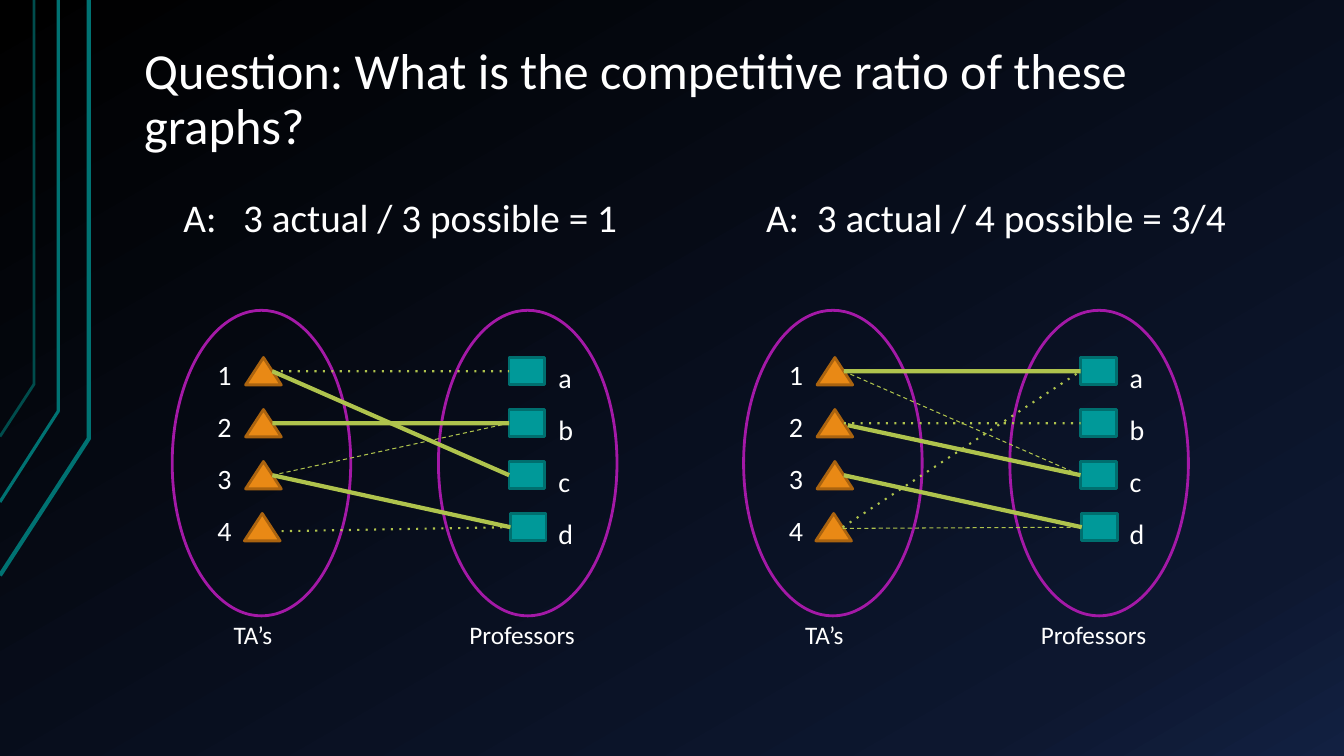
"""Build the slide on the competitive ratio of two TA-professor matchings."""
from copy import deepcopy
from dataclasses import dataclass

from lxml.etree import SubElement
from pptx import Presentation
from pptx.dml.color import RGBColor as Rgb
from pptx.enum.shapes import MSO_CONNECTOR as Link, MSO_SHAPE as Preset
from pptx.enum.text import MSO_ANCHOR as Anchor, MSO_AUTO_SIZE as AutoSize, PP_ALIGN as Align
from pptx.oxml.ns import qn
from pptx.util import Cm, Pt


@dataclass(frozen=True)
class Theme:
    font: str = "Calibri"
    title_size: int = 36
    answer_size: int = 28
    label_size: int = 20
    caption_size: int = 18
    text: str = "FFFFFF"
    backdrop: tuple = ((0, "000000"), (0.85, "0D172F"), (1, "122041"))
    stripe: str = "007272"
    stripe_dim: str = "004C4C"
    ta: tuple = ("E98915", "AA630F")
    professor: tuple = ("009999", "006F6F")
    group: str = "A419A7"
    edge: str = "AFC34D"


theme = Theme()


def write(shape, text, size):
    frame = shape.text_frame
    frame.text = text
    frame.word_wrap = True
    frame.auto_size = AutoSize.NONE
    paragraph = frame.paragraphs[0]
    paragraph.alignment = Align.LEFT
    font = paragraph.runs[0].font
    font.name, font.size = theme.font, Pt(size)
    font.color.rgb = Rgb.from_string(theme.text)
    return paragraph


def paint(shape, line, width, fill=None):
    shape.shadow.inherit = False
    shape.line.color.rgb = Rgb.from_string(line)
    shape.line.width = Pt(width)
    if fill:
        shape.fill.solid()
        shape.fill.fore_color.rgb = Rgb.from_string(fill)
    else:
        shape.fill.background()


deck = Presentation()
deck.slide_width, deck.slide_height = Cm(33.87), Cm(19.05)
slide = deck.slides.add_slide(deck.slide_layouts[3])
shapes = slide.shapes

backdrop = slide.background.fill
backdrop.gradient()
backdrop.gradient_angle = 300
stop_list = slide.element.find(".//" + qn("a:gsLst"))
stop_list.append(deepcopy(stop_list[-1]))
for stop, (position, color) in zip(backdrop.gradient_stops, theme.backdrop):
    stop.position = position
    stop.color.rgb = Rgb.from_string(color)

for x, bend, foot, color, width in [
    (2.24, 11.05, 14.5, theme.stripe, 3),
    (1.47, 10.36, 12.65, theme.stripe, 2.25),
    (0.86, 9.68, 11, theme.stripe_dim, 2),
]:
    outline = shapes.build_freeform(Cm(0), Cm(foot))
    outline.add_line_segments([(Cm(x), Cm(bend)), (Cm(x), Cm(0))], close=False)
    paint(outline.convert_to_shape(), color, width)

question = shapes.title
question.left, question.top, question.width, question.height = Cm(3.38), Cm(0.76), Cm(28.78), Cm(3.4)
write(question, "Question: What is the competitive ratio of these graphs?", theme.title_size).line_spacing = 0.9
question.text_frame.vertical_anchor = Anchor.BOTTOM

for index, left, answer in [
    (1, 3.38, "A:   3 actual / 3 possible = 1"),
    (2, 18.06, "A:  3 actual / 4 possible = 3/4"),
]:
    body = slide.placeholders[index]
    body.left, body.top, body.width, body.height = Cm(left), Cm(4.75), Cm(14.1), Cm(12.4)
    paragraph = write(body, answer, theme.answer_size)
    paragraph.line_spacing, paragraph.space_before = 0.9, Pt(0)
    properties = paragraph._p.get_or_add_pPr()
    properties.set("marL", str(Cm(0.84)))
    properties.set("indent", str(Cm(0.15)))
    SubElement(properties, qn("a:buNone"))
    body.text_frame.margin_top = body.text_frame.margin_bottom = Cm(0.25)

question.text_frame.margin_top = question.text_frame.margin_bottom = Cm(0.25)

strokes = {"matched": (3, "solid"), "spare": (1.5, "dot"), "possible": (0.75, "dash")}
graphs = [
    (0, [
        ("1", "c", "matched", 0, 0),
        ("2", "b", "matched", 0, 0),
        ("3", "b", "possible", 0, 0),
        ("3", "d", "matched", 0, 0),
        ("4", "d", "spare", 0.26, 0.1),
        ("1", "a", "spare", 0, 0),
    ]),
    (14.4, [
        ("1", "c", "possible", 0, 0),
        ("2", "b", "spare", 0, 0),
        ("3", "d", "matched", 0, 0),
        ("4", "a", "spare", 0, 0),
        ("1", "a", "matched", 0, 0),
        ("2", "c", "matched", 0.1, 0.05),
        ("4", "d", "possible", 0, 0.03),
    ]),
]
node_width, node_height, pitch = 0.9, 0.69, 1.31

for shift, edges in graphs:
    starts, professors = {}, {}
    for row, (number, letter) in enumerate(zip("1234", "abcd")):
        drop = row * pitch
        nudge = 0.03 if row == 3 else 0
        ta_left, top = shift + 6.19 - nudge, 9.01 + drop
        ta = shapes.add_shape(Preset.ISOSCELES_TRIANGLE, Cm(ta_left), Cm(top), Cm(node_width), Cm(node_height))
        paint(ta, theme.ta[1], 2, theme.ta[0])
        starts[number] = (ta_left + node_width * 0.75, top + node_height / 2)
        professor = shapes.add_shape(
            Preset.RECTANGLE, Cm(shift + 12.83 + nudge), Cm(top), Cm(node_width), Cm(node_height))
        paint(professor, theme.professor[1], 2, theme.professor[0])
        professors[letter] = professor
        for label, left, label_top in [(number, 5.23, 8.89), (letter, 13.82, 8.97)]:
            box = shapes.add_textbox(Cm(shift + left), Cm(label_top + drop), Cm(1.09), Cm(0.89))
            write(box, label, theme.label_size)

    for caption, group_left, caption_left, caption_width in [
        ("TA’s", 4.34, 5.64, 2.57),
        ("Professors", 11.05, 11.58, 5.18),
    ]:
        group = shapes.add_shape(Preset.OVAL, Cm(shift + group_left), Cm(7.82), Cm(4.5), Cm(7.7))
        paint(group, theme.group, 2)
        box = shapes.add_textbox(Cm(shift + caption_left), Cm(15.47), Cm(caption_width), Cm(1.32))
        write(box, caption, theme.caption_size)

    for number, letter, kind, dx, dy in edges:
        x, y = starts[number]
        width, dash = strokes[kind]
        edge = shapes.add_connector(Link.STRAIGHT, Cm(x + dx), Cm(y + dy), Cm(x + dx), Cm(y + dy))
        edge.end_connect(professors[letter], 1)
        edge.line.color.rgb = Rgb.from_string(theme.edge)
        edge.line.width = Pt(width)
        SubElement(edge.get_or_add_ln(), qn("a:prstDash")).set("val", dash)
        SubElement(edge.element.spPr, qn("a:effectLst"))

deck.save("out.pptx")
